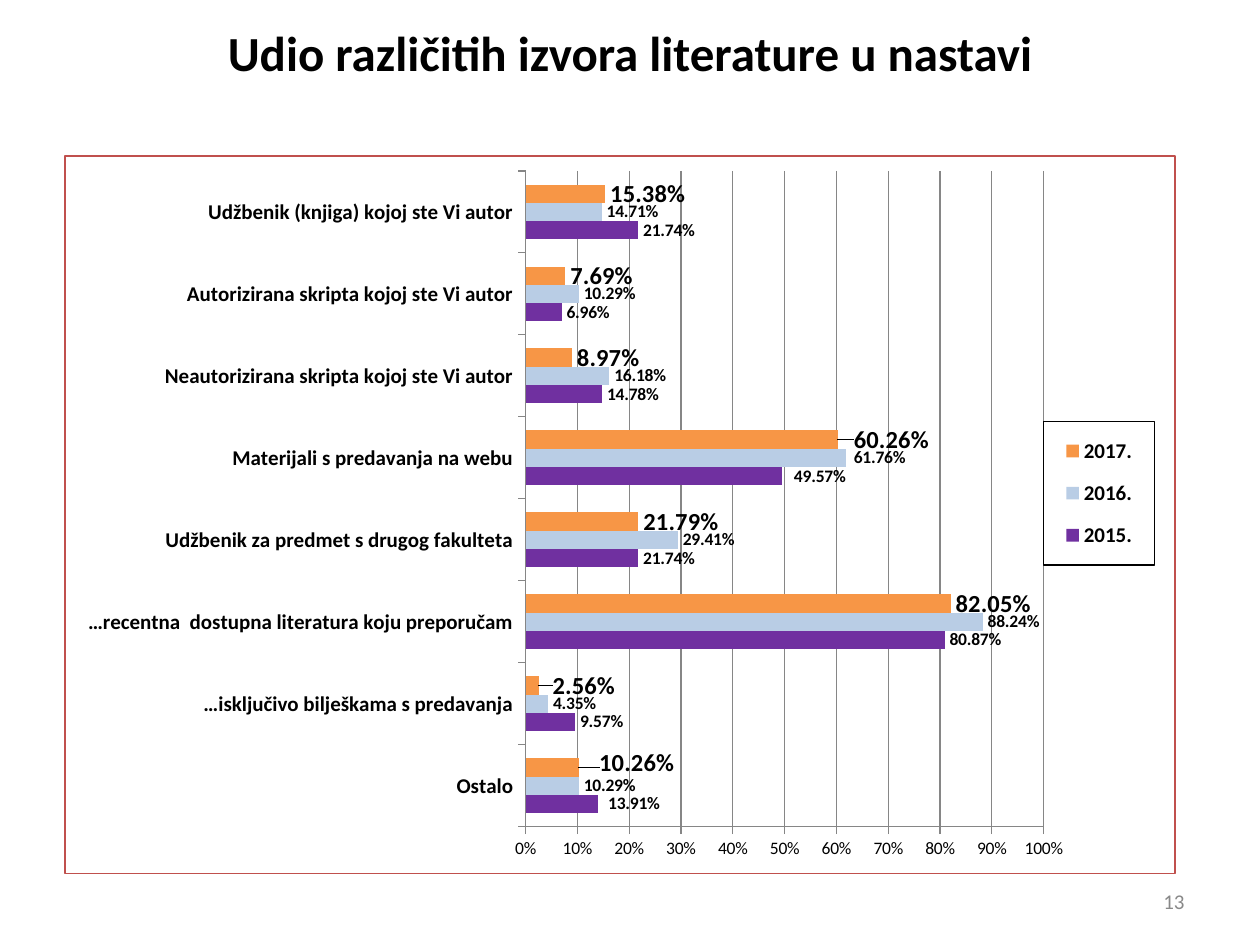
from typing import NamedTuple

from lxml import etree
from pptx import Presentation
from pptx.chart.data import CategoryChartData
from pptx.dml.color import RGBColor
from pptx.enum.chart import (XL_CHART_TYPE, XL_LABEL_POSITION,
                             XL_LEGEND_POSITION, XL_TICK_MARK)
from pptx.enum.text import MSO_ANCHOR, PP_ALIGN
from pptx.oxml import parse_xml
from pptx.oxml.ns import nsdecls, qn
from pptx.util import Inches, Pt

OUTSIDE_END = XL_LABEL_POSITION.OUTSIDE_END
TICK_OUT = XL_TICK_MARK.OUTSIDE
TITLE_ONLY = 5

FONT = "Calibri"
PERCENT = "0.00%"
BLACK = RGBColor(0x00, 0x00, 0x00)
WHITE = RGBColor(0xFF, 0xFF, 0xFF)
GRAY = RGBColor(0x89, 0x89, 0x89)
AXIS_GRAY = RGBColor(0x86, 0x86, 0x86)
RED = RGBColor(0xC0, 0x50, 0x4D)
PURPLE = RGBColor(0x70, 0x30, 0xA0)
PALE_BLUE = RGBColor(0xB9, 0xCD, 0xE5)
ORANGE = RGBColor(0xF7, 0x96, 0x46)

CATEGORIES = [
    "Ostalo",
    "…isključivo bilješkama s predavanja",
    "…recentna  dostupna literatura koju preporučam",
    "Udžbenik za predmet s drugog fakulteta",
    "Materijali s predavanja na webu",
    "Neautorizirana skripta kojoj ste Vi autor",
    "Autorizirana skripta kojoj ste Vi autor",
    "Udžbenik (knjiga) kojoj ste Vi autor",
]


class Year(NamedTuple):
    name: str
    color: RGBColor
    label_size: int
    values: list[float]
    shifts: dict[int, tuple[float, float]]  # label offsets, share of chart size


YEARS = [
    Year("2015.", PURPLE, 10,
         [0.1391, 0.0957, 0.8087, 0.2174, 0.4957, 0.1478, 0.0696, 0.2174],
         {0: (0.005, 0), 4: (0.006, 0)}),
    Year("2016.", PALE_BLUE, 10,
         [0.1029, 0.0435, 0.8824, 0.2941, 0.6176, 0.1618, 0.1029, 0.1471],
         {4: (0.003, 0)}),
    Year("2017.", ORANGE, 14,
         [0.1026, 0.0256, 0.8205, 0.2179, 0.6026, 0.0897, 0.0769, 0.1538],
         {0: (0.014, -0.007), 1: (0.008, 0), 4: (0.01, 0)}),
]


def set_font(font, size: int, bold: bool = False, color: RGBColor = BLACK) -> None:
    font.name, font.size, font.bold = FONT, Pt(size), bold
    font.color.rgb = color


def set_layout(parent, index: int, **values) -> None:
    """Give a chart part a manual layout, as its child number index."""
    for old in parent.findall(qn("c:layout")):
        parent.remove(old)
    layout = parse_xml(f"<c:layout {nsdecls('c')}><c:manualLayout/></c:layout>")
    for tag, value in values.items():
        etree.SubElement(layout[0], qn(f"c:{tag}")).set("val", str(value))
    parent.insert(index, layout)


def outline(before, line: RGBColor, width: float) -> None:
    """Add a white box with a line just before a chart part's text settings."""
    before.addprevious(parse_xml(
        f'<c:spPr {nsdecls("c", "a")}>'
        f'<a:solidFill><a:srgbClr val="{WHITE}"/></a:solidFill>'
        f'<a:ln w="{Pt(width)}"><a:solidFill><a:srgbClr val="{line}"/>'
        f'</a:solidFill></a:ln></c:spPr>'))


def format_series(series, year: Year) -> None:
    series.format.fill.solid()
    series.format.fill.fore_color.rgb = year.color
    series.invert_if_negative = False
    labels = series.data_labels
    labels.show_value = True
    labels.number_format, labels.number_format_is_linked = PERCENT, False
    labels.position = OUTSIDE_END
    set_font(labels.font, year.label_size, True)
    for i, (dx, dy) in year.shifts.items():
        label = series.points[i].data_label
        label.position = OUTSIDE_END
        set_font(label.font, year.label_size, True)
    for item in series._element.iter(qn("c:dLbl")):
        dx, dy = year.shifts[int(item.find(qn("c:idx")).get("val"))]
        set_layout(item, 1, x=dx, y=dy)
        item.insert(2, parse_xml(
            f'<c:numFmt {nsdecls("c")} formatCode="{PERCENT}" sourceLinked="0"/>'))


def add_bar_chart(s) -> None:
    data = CategoryChartData(number_format=PERCENT)
    data.categories = CATEGORIES
    for year in YEARS:
        data.add_series(year.name, year.values)
    chart = s.shapes.add_chart(XL_CHART_TYPE.BAR_CLUSTERED, Inches(0.51), Inches(1.23),
                               Inches(8.82), Inches(5.71), data).chart
    chart.has_title = False
    set_font(chart.font, 10)
    space = chart._chartSpace
    outline(space.find(qn("c:txPr")), RED, 1)

    # Bars and their labels
    plot = chart.plots[0]
    plot.gap_width, plot.overlap = 150, 0
    plot.vary_by_categories = False
    for series, year in zip(plot.series, YEARS):
        format_series(series, year)

    # Axes
    cat, val = chart.category_axis, chart.value_axis
    for axis in (cat, val):
        axis.major_tick_mark = TICK_OUT
        axis.format.line.color.rgb = AXIS_GRAY
    set_font(cat.tick_labels.font, 12, True)
    set_font(val.tick_labels.font, 10)
    val.minimum_scale, val.maximum_scale, val.major_unit = 0, 1, 0.1
    val.tick_labels.number_format = "0%"
    val.tick_labels.number_format_is_linked = False
    val.has_major_gridlines = True
    val.major_gridlines.format.line.color.rgb = AXIS_GRAY

    # Legend
    chart.has_legend = True
    legend = chart.legend
    legend.position = XL_LEGEND_POSITION.RIGHT
    legend.include_in_layout = False
    set_font(legend.font, 12, True)
    legend_xml = space.find(".//" + qn("c:legend"))
    outline(legend_xml.find(qn("c:txPr")), BLACK, 0.75)

    # Places of plot and legend within the chart
    edges = dict(xMode="edge", yMode="edge")
    set_layout(space.find(".//" + qn("c:plotArea")), 0, layoutTarget="inner",
               **edges, x=0.415, y=0.021, w=0.467, h=0.914)
    set_layout(legend_xml, 1, **edges, x=0.882, y=0.37, w=0.1, h=0.2)


def main() -> None:
    prs = Presentation()
    prs.slide_width, prs.slide_height = Inches(10), Inches(7.5)
    s = prs.slides.add_slide(prs.slide_layouts[TITLE_ONLY])

    # Title
    title = s.shapes.title
    title.left, title.top = Inches(0.71), Inches(0.13)
    title.width, title.height = Inches(8.58), Inches(0.57)
    title.fill.solid()
    title.fill.fore_color.rgb = WHITE
    title.text_frame.text = "Udio različitih izvora literature u nastavi"
    p = title.text_frame.paragraphs[0]
    p.alignment = PP_ALIGN.CENTER
    set_font(p.font, 28, True)

    add_bar_chart(s)

    # Page number
    tf = s.shapes.add_textbox(Inches(7.17), Inches(6.95),
                              Inches(2.33), Inches(0.4)).text_frame
    tf.word_wrap = True
    tf.vertical_anchor = MSO_ANCHOR.MIDDLE
    p = tf.paragraphs[0]
    p.text = "13"
    p.alignment = PP_ALIGN.RIGHT
    set_font(p.font, 12, color=GRAY)

    prs.save("out.pptx")


if __name__ == "__main__":
    main()
